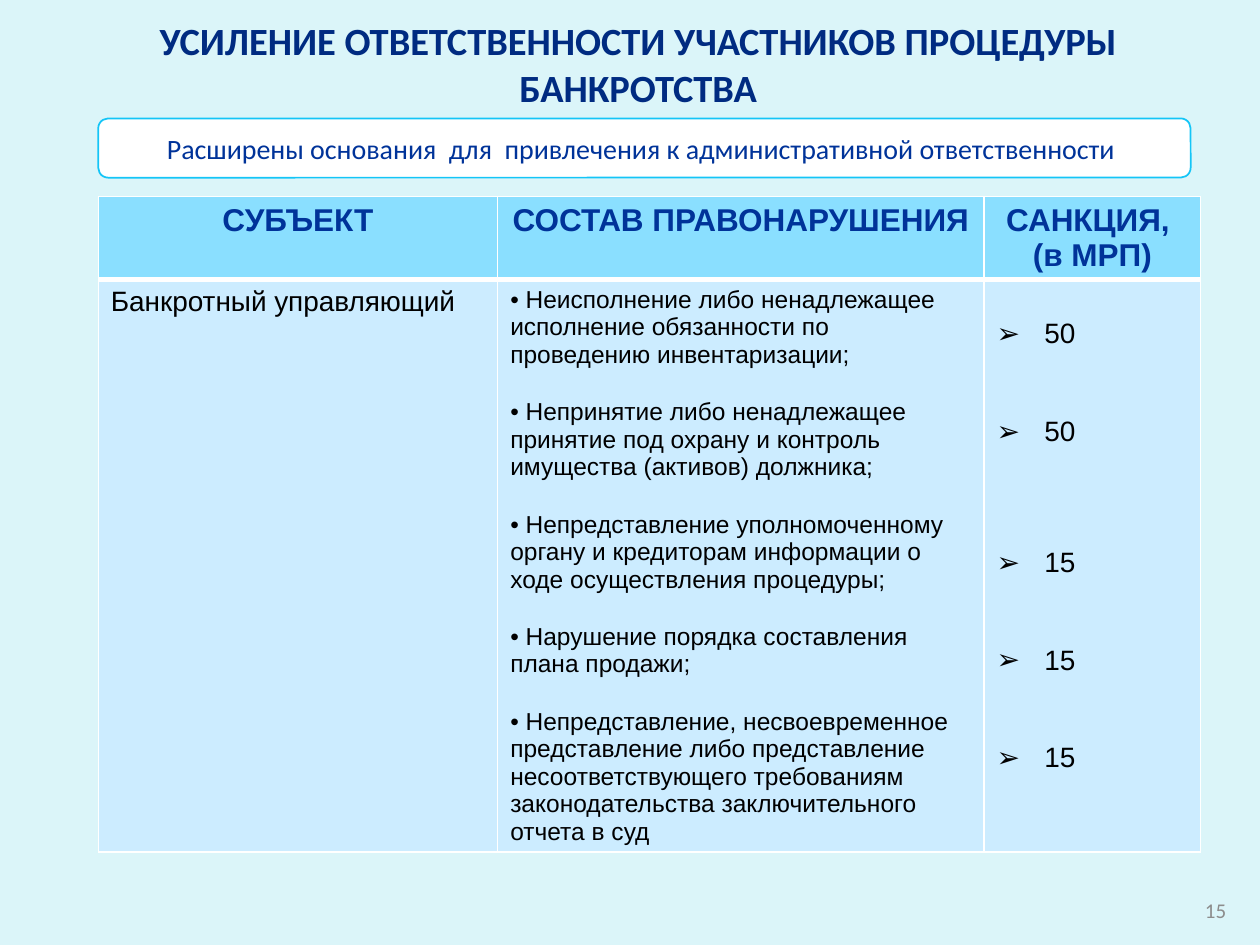
from lxml.etree import SubElement
from pptx import Presentation
from pptx.dml.color import RGBColor
from pptx.enum.shapes import MSO_SHAPE
from pptx.enum.text import MSO_ANCHOR, MSO_AUTO_SIZE, PP_ALIGN
from pptx.oxml.ns import qn
from pptx.util import Emu, Inches, Pt

BACKGROUND = RGBColor(0xDB, 0xF5, 0xF9)
TITLE = RGBColor(0x00, 0x2B, 0x81)
BLUE = RGBColor(0x00, 0x33, 0x99)
CYAN = RGBColor(0x14, 0xC5, 0xF7)
HEADER = RGBColor(0x8A, 0xDF, 0xFF)
BODY = RGBColor(0xCC, 0xEC, 0xFF)
WHITE = RGBColor(0xFF, 0xFF, 0xFF)
BLACK = RGBColor(0x00, 0x00, 0x00)
GRAY = RGBColor(0x8C, 0x8C, 0x8C)

LEFT = Inches(0.78)
COLUMNS = [3.17, 3.86, 1.72]
ROWS = [0.66, 4.54]
HEADINGS = ["СУБЪЕКТ", "СОСТАВ ПРАВОНАРУШЕНИЯ", "САНКЦИЯ, \n(в МРП)"]
OFFENCES = [
    " Неисполнение либо ненадлежащее исполнение обязанности по проведению инвентаризации;",
    " Непринятие либо ненадлежащее принятие под охрану и контроль имущества (активов) должника;",
    " Непредставление уполномоченному органу и кредиторам информации о ходе осуществления процедуры;",
    " Нарушение порядка составления плана продажи;",
    " Непредставление, несвоевременное представление либо представление "
    "несоответствующего требованиям законодательства заключительного отчета в суд",
]
SANCTIONS = ["50", "50", "15", "15", "15"]


def write(tf, text, size, color, font="Arial", bold=False, align=PP_ALIGN.LEFT):
    tf.text = text
    tf.word_wrap = True
    for p in tf.paragraphs:
        p.alignment = align
        for r in p.runs:
            r.font.name = font
            r.font.size = Pt(size)
            r.font.bold = bold
            r.font.color.rgb = color


def set_list(p, indent, bullet=None):
    pPr = p._p.get_or_add_pPr()
    pPr.set("marL", str(Inches(indent)))
    pPr.set("indent", str(-Inches(indent)))
    if bullet:
        SubElement(pPr, qn("a:buFont"), typeface="Arial")
        SubElement(pPr, qn("a:buChar"), char=bullet)


prs = Presentation()
prs.slide_width, prs.slide_height = Inches(10), Inches(7.5)
slide = prs.slides.add_slide(prs.slide_layouts[5])
slide.background.fill.solid()
slide.background.fill.fore_color.rgb = BACKGROUND

sp = slide.shapes.title
sp.left, sp.top, sp.width, sp.height = Inches(0.28), Inches(0.23), Inches(9.57), Inches(0.55)
tf = sp.text_frame
write(tf, "УСИЛЕНИЕ ОТВЕТСТВЕННОСТИ УЧАСТНИКОВ ПРОЦЕДУРЫ БАНКРОТСТВА",
      22, TITLE, "Calibri", True, PP_ALIGN.CENTER)
tf.auto_size = MSO_AUTO_SIZE.NONE
tf.vertical_anchor = MSO_ANCHOR.MIDDLE

sp = slide.shapes.add_shape(MSO_SHAPE.ROUNDED_RECTANGLE, LEFT, Inches(0.94), Inches(8.67), Inches(0.47))
sp.shadow.inherit = False
sp.fill.solid()
sp.fill.fore_color.rgb = WHITE
sp.line.color.rgb = CYAN
sp.line.width = Pt(1)
write(sp.text_frame, "Расширены основания  для  привлечения к административной ответственности ",
      16, BLUE, "Calibri", align=PP_ALIGN.CENTER)
sp.text_frame.vertical_anchor = MSO_ANCHOR.MIDDLE

table = slide.shapes.add_table(2, 3, LEFT, Inches(1.56), Inches(sum(COLUMNS)), Inches(sum(ROWS))).table
for column, width in zip(table.columns, COLUMNS):
    column.width = Inches(width)
for row, height in zip(table.rows, ROWS):
    row.height = Inches(height)

for cell, heading in zip(table.rows[0].cells, HEADINGS):
    write(cell.text_frame, heading, 18, BLUE, bold=True, align=PP_ALIGN.CENTER)

subject, offences, sanctions = table.rows[1].cells
write(subject.text_frame, "Банкротный управляющий", 16, BLACK)
set_list(subject.text_frame.paragraphs[0], 0.25)

write(offences.text_frame, "\n".join(OFFENCES), 14, BLACK)
for i, p in enumerate(offences.text_frame.paragraphs):
    p.space_before = Pt(17 if i else 0)
    set_list(p, 0, "•")

write(sanctions.text_frame, "\n".join(SANCTIONS), 16, BLACK)
sanctions.margin_top = Inches(0.31)
for p, gap in zip(sanctions.text_frame.paragraphs, [0, 38, 57, 38, 38]):
    p.space_before = Pt(gap)
    set_list(p, 0.38, "➢")

for i, row in enumerate(table.rows):
    for cell in row.cells:
        tcPr = cell._tc.get_or_add_tcPr()
        for side in ("L", "R", "T", "B"):
            thick = (i, side) in [(0, "B"), (1, "T")]
            ln = SubElement(tcPr, qn(f"a:ln{side}"), w=str(Pt(3 if thick else 1)))
            SubElement(SubElement(ln, qn("a:solidFill")), qn("a:srgbClr"), val=str(WHITE))
        cell.fill.solid()
        cell.fill.fore_color.rgb = BODY if i else HEADER

sp = slide.shapes.add_textbox(Inches(7.5), Inches(7.02), Inches(2.33), Inches(0.4))
write(sp.text_frame, "15", 12, GRAY, "Calibri", align=PP_ALIGN.RIGHT)
sp.text_frame.vertical_anchor = MSO_ANCHOR.MIDDLE

prs.save("out.pptx")
